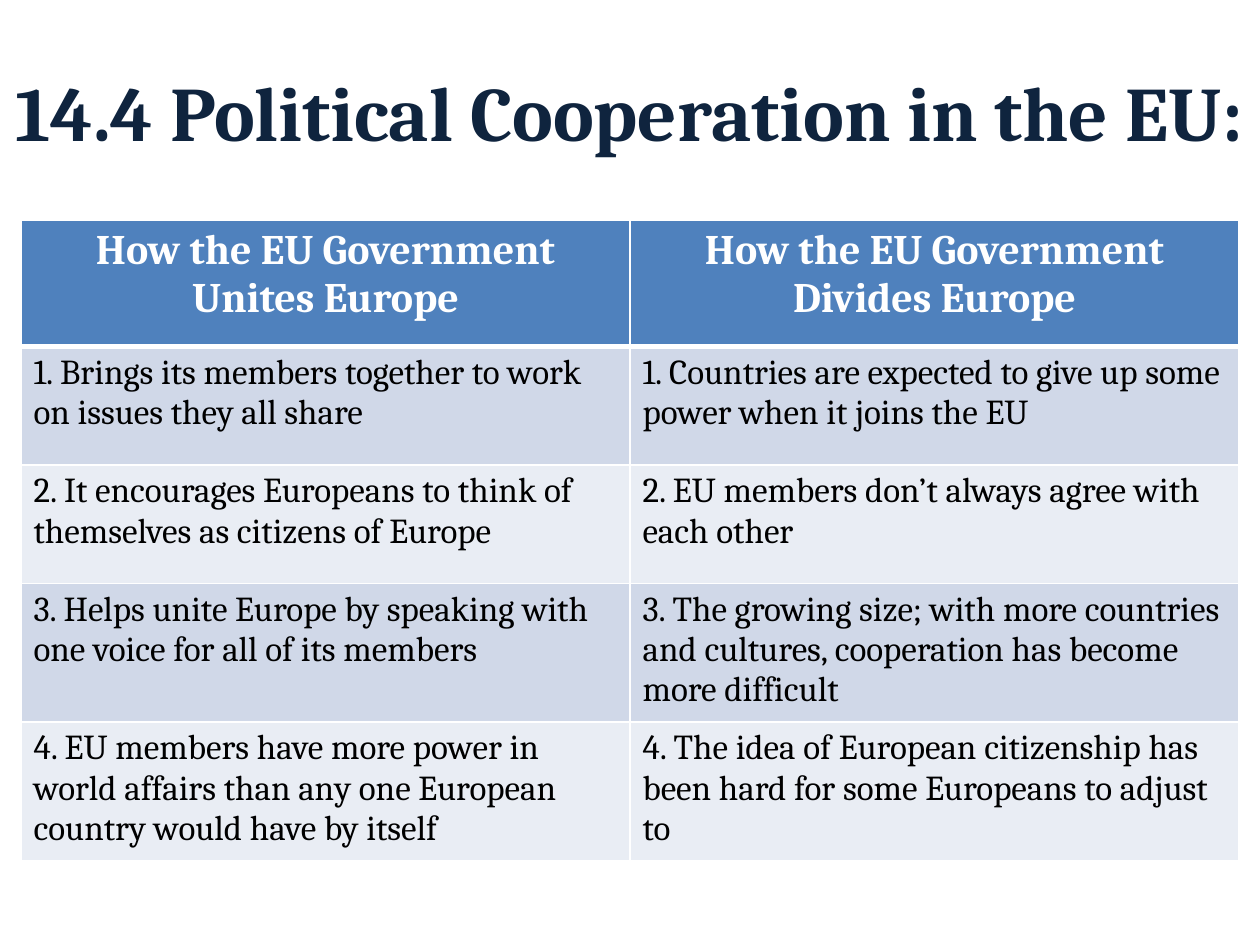
from lxml import etree
from pptx import Presentation
from pptx.dml.color import RGBColor
from pptx.enum.text import MSO_ANCHOR, PP_ALIGN
from pptx.oxml.ns import qn
from pptx.util import Inches, Pt

MIDDLE = MSO_ANCHOR.MIDDLE
LEFT, CENTER = PP_ALIGN.LEFT, PP_ALIGN.CENTER

THEME = {
    "font": "Cambria",
    "title": {"size": 44, "color": "0F243E", "bold": True, "align": CENTER},
    "header": {"size": 24, "color": "FFFFFF", "bold": True, "align": CENTER},
    "body": {"size": 20, "color": "000000", "bold": False, "align": LEFT},
    "header_fill": "4F81BD",
    "band_fills": ["D0D8E8", "E9EDF4"],
    "rule": "FFFFFF",
}

ROWS = [
    ("How the EU Government Unites Europe",
     "How the EU Government Divides Europe"),
    ("1. Brings its members together to work on issues they all share",
     "1. Countries are expected to give up some power when it joins the EU"),
    ("2. It encourages Europeans to think of themselves as citizens of Europe",
     "2. EU members don’t always agree with each other"),
    ("3. Helps unite Europe by speaking with one voice for all of its members",
     "3. The growing size; with more countries and cultures, cooperation has become more difficult"),
    ("4. EU members have more power in world affairs than any one European country would have by itself",
     "4. The idea of European citizenship has been hard for some Europeans to adjust to"),
]


def write(frame, text, style):
    para = frame.paragraphs[0]
    para.alignment = style["align"]
    span = para.add_run()
    span.text = text
    formats = {"name": THEME["font"], "size": Pt(style["size"]), "bold": style["bold"]}
    for name, value in formats.items():
        setattr(span.font, name, value)
    span.font.color.rgb = RGBColor.from_string(style["color"])


def add_borders(cell, widths):
    properties = cell._tc.get_or_add_tcPr()
    for index, (side, width) in enumerate(widths.items()):
        line = etree.Element(qn(f"a:ln{side}"), w=str(Pt(width)))
        fill = etree.SubElement(line, qn("a:solidFill"))
        etree.SubElement(fill, qn("a:srgbClr"), val=THEME["rule"])
        properties.insert(index, line)


deck = Presentation()
deck.slide_width, deck.slide_height = Inches(10), Inches(7.5)
page = deck.slides.add_slide(deck.slide_layouts[6])
width, height = deck.slide_width, deck.slide_height

# Title across the full width
box = page.shapes.add_textbox(0, height // 30, width, height // 6)
frame_formats = {"word_wrap": True, "vertical_anchor": MIDDLE,
                 "margin_left": 0, "margin_right": 0}
for name, value in frame_formats.items():
    setattr(box.text_frame, name, value)
write(box.text_frame, "14.4 Political Cooperation in the EU:", THEME["title"])

# Table: two equal columns between side margins of a sixtieth of the page
margin = width // 60
header_height, row_height = Inches(1), Inches(0.94)
table = page.shapes.add_table(
    len(ROWS), len(ROWS[0]), margin, Inches(1.75), width - 2 * margin,
    header_height + row_height * (len(ROWS) - 1)).table

for row, texts in enumerate(ROWS):
    is_header = row == 0
    table.rows[row].height = header_height if is_header else row_height
    style = THEME["header" if is_header else "body"]
    color = THEME["header_fill"] if is_header else THEME["band_fills"][(row - 1) % 2]
    # The rule under the header is thicker than the others
    widths = {"L": 1, "R": 1, "T": 3 if row == 1 else 1, "B": 3 if is_header else 1}
    for column, text in enumerate(texts):
        cell = table.cell(row, column)
        cell.fill.solid()
        cell.fill.fore_color.rgb = RGBColor.from_string(color)
        add_borders(cell, widths)
        write(cell.text_frame, text, style)

deck.save("out.pptx")
